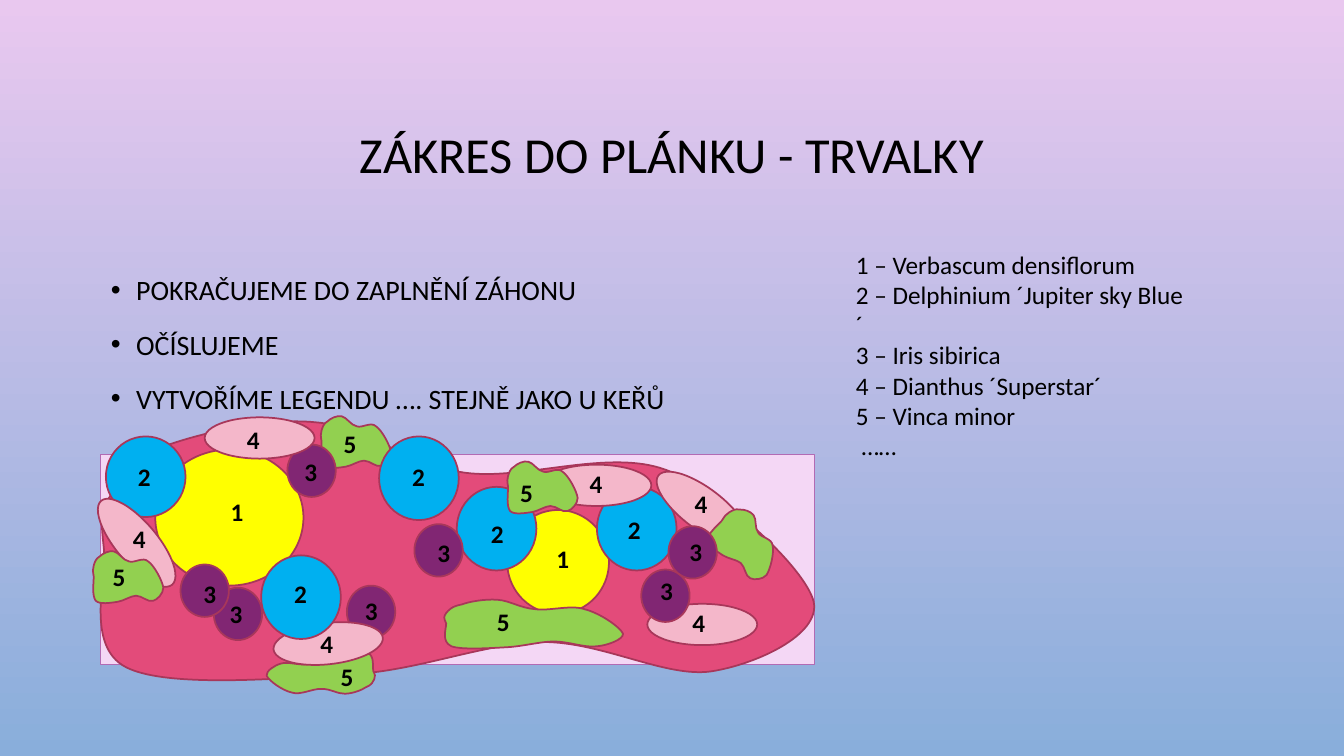
from pptx import Presentation
from pptx.dml.color import RGBColor
from pptx.enum.shapes import MSO_SHAPE as SHAPE
from pptx.enum.text import MSO_ANCHOR as ANCHOR, MSO_AUTO_SIZE as AUTO, PP_ALIGN as ALIGN
from pptx.oxml.ns import qn
from pptx.util import Pt
from lxml.etree import SubElement

PX = 9144  # EMU; 100 px to the inch
FONT = "Calibri"
COLORS = {
    "sky": "E9C8EF", "ground": "89AEDB", "text": "000000",
    "plan": "F4D7F5", "plan line": "B26BB4",
    "bed": "E34B7A", "outline": "A8375A",
    "verbascum": "FFFF00", "delphinium": "00B0F0", "iris": "812673",
    "dianthus": "F4B7CA", "vinca": "92D050",
}
COLORS = {name: RGBColor.from_string(value) for name, value in COLORS.items()}

# Closed outlines: width, height, start point, then two control points and an end point per curve
BED = (708, 257, (11, 73), [
    (21, 56, 32, 36, 66, 24), (100, 12, 165, -4, 214, 1), (264, 5, 305, 43, 362, 51),
    (420, 59, 504, 27, 561, 48), (619, 70, 700, 146, 708, 179), (715, 212, 651, 241, 607, 248),
    (562, 255, 499, 219, 440, 219), (380, 220, 319, 247, 250, 251), (181, 255, 67, 265, 26, 244),
    (-15, 223, 7, 155, 4, 126), (1, 97, 0, 90, 11, 73)])
VINCA = (70, 51, (1, 14), [
    (2, 11, 3, 7, 7, 5), (10, 2, 16, -1, 21, 0), (26, 1, 30, 9, 36, 10),
    (41, 12, 50, 5, 55, 10), (61, 14, 69, 29, 70, 36), (70, 42, 64, 48, 60, 49),
    (55, 51, 49, 44, 43, 44), (38, 44, 31, 49, 25, 50), (18, 51, 7, 53, 3, 49),
    (-1, 44, 1, 31, 1, 25), (0, 19, 0, 18, 1, 14)])

SIZES = {"verbascum": (147, 135), "delphinium": (79, 83), "iris": (48, 52),
         "dianthus": (109, 41), "vinca": (70, 51)}
# Plant, left, top, rotation, and a size where it differs from the usual one; back to front
PLANTS = [
    ("verbascum", 503, 506, 0, 101, 103), ("vinca", 318, 413, 0),
    ("verbascum", 154, 446, 0), ("delphinium", 105, 433, 0, 79, 80),
    ("delphinium", 376, 433, 0), ("delphinium", 453, 483, 0), ("delphinium", 592, 483, 0),
    ("iris", 344, 581, 0), ("iris", 212, 583, 0), ("iris", 179, 560, 0),
    ("iris", 285, 441, 0), ("iris", 411, 520, 0),
    ("dianthus", 203, 414, 0), ("dianthus", 537, 461, 0), ("dianthus", 81, 518, 49.8),
    ("dianthus", 642, 484, 36.9), ("dianthus", 642, 599, 0), ("iris", 636, 565, 0),
    ("vinca", 440, 595, 0, 178, 48), ("vinca", 503, 458, 0), ("vinca", 92, 547, 0),
    ("vinca", 706, 514, 41.6), ("vinca", 265, 652, 172.9, 107, 39),
    ("dianthus", 271, 618, 353.8), ("delphinium", 259, 551, 0), ("iris", 663, 522, 0),
]
LABELS = {
    "1": [(219, 487), (542, 534)],
    "2": [(282, 569), (399, 453), (127, 453), (477, 509), (613, 505)],
    "3": [(352, 586), (424, 528), (292, 448), (192, 569), (218, 589), (645, 566), (674, 527)],
    "4": [(235, 416), (122, 514), (308, 618), (575, 460), (679, 480), (677, 598)],
    "5": [(331, 420), (102, 552), (506, 469), (328, 651), (483, 597)],
}
LEGEND = ["1 – Verbascum densiflorum", "2 – Delphinium ´Jupiter sky Blue´", "3 – Iris sibirica",
          "4 – Dianthus ´Superstar´", "5 – Vinca minor", " ……"]
STEPS = ["POKRAČUJEME DO ZAPLNĚNÍ ZÁHONU", "OČÍSLUJEME",
         "VYTVOŘÍME LEGENDU …. STEJNĚ JAKO U KEŘŮ"]


def add_area(fill, box, outline=None, preset=SHAPE.OVAL, line="outline", weight=1.25):
    """Add a filled preset shape, or a curved outline stretched to the box."""
    x, y, w, h = [v * PX for v in box]
    if outline:
        fb = slide.shapes.build_freeform(x, y)
        fb.add_line_segments([(x + w, y), (x + w, y + h), (x, y + h)])
        sp = fb.convert_to_shape()
        width, height, start, curves = outline
        geom = next(sp._element.iter(qn("a:path")))
        for child in list(geom):
            geom.remove(child)
        geom.set("w", str(width))
        geom.set("h", str(height))
        for tag, points in [("a:moveTo", start)] + [("a:cubicBezTo", c) for c in curves]:
            step = SubElement(geom, qn(tag))
            for px, py in zip(points[::2], points[1::2]):
                SubElement(step, qn("a:pt"), x=str(px), y=str(py))
        SubElement(geom, qn("a:close"))
    else:
        sp = slide.shapes.add_shape(preset, x, y, w, h)
    sp.shadow.inherit = False
    sp.fill.solid()
    sp.fill.fore_color.rgb = COLORS[fill]
    sp.line.color.rgb = COLORS[line]
    sp.line.width = Pt(weight)
    return sp


def write(sp, box, lines, size, bold=False):
    """Place a text shape and fill it with one paragraph per line."""
    sp.left, sp.top, sp.width, sp.height = [v * PX for v in box]
    tf = sp.text_frame
    tf.word_wrap = True
    tf.auto_size = AUTO.NONE
    tf.text = "\n".join(lines)
    for p in tf.paragraphs:
        for r in p.runs:
            r.font.name = FONT
            r.font.size = Pt(size)
            r.font.bold = bold
            r.font.color.rgb = COLORS["text"]
    return tf


prs = Presentation()
prs.slide_width, prs.slide_height = 1333 * PX, 750 * PX
slide = prs.slides.add_slide(prs.slide_layouts[1])

bg = slide.background.fill
bg.gradient()
bg.gradient_angle = 270
for stop, position, name in zip(bg.gradient_stops, (0, 1), ("sky", "ground")):
    stop.position = position
    stop.color.rgb = COLORS[name]

title, body = slide.placeholders
tf = write(title, (100, 68, 1133, 175), ["ZÁKRES DO PLÁNKU - TRVALKY"], 36)
tf.vertical_anchor = ANCHOR.MIDDLE
tf.paragraphs[0].alignment = ALIGN.CENTER
tf.paragraphs[0].line_spacing = 0.9

tf = write(body, (100, 259, 1133, 374), STEPS, 20)
tf.vertical_anchor = ANCHOR.TOP
for i, p in enumerate(tf.paragraphs):
    pPr = p._p.get_or_add_pPr()
    pPr.set("marL", str(25 * PX))
    pPr.set("indent", str(-25 * PX))
    color = SubElement(pPr, qn("a:buClr"))
    SubElement(color, qn("a:srgbClr"), val=str(COLORS["text"]))
    SubElement(pPr, qn("a:buFont"), typeface="Arial")
    SubElement(pPr, qn("a:buChar"), char="•")
    p.line_spacing = 1.2
    p.space_before = Pt(10 if i else 0)

add_area("plan", (100, 451, 708, 208), preset=SHAPE.RECTANGLE, line="plan line", weight=0.75)
add_area("bed", (99, 418, 708, 257), BED)
for plant, x, y, rotation, *size in PLANTS:
    box = (x, y, *(size or SIZES[plant]))
    sp = add_area(plant, box, VINCA if plant == "vinca" else None)
    sp.rotation = rotation

write(slide.shapes.add_textbox(0, 0, 0, 0), (839, 242, 351, 192), LEGEND, 18)
for number, places in LABELS.items():
    for x, y in places:
        write(slide.shapes.add_textbox(0, 0, 0, 0), (x, y, 30, 40), [number], 18, bold=True)

prs.save("out.pptx")
